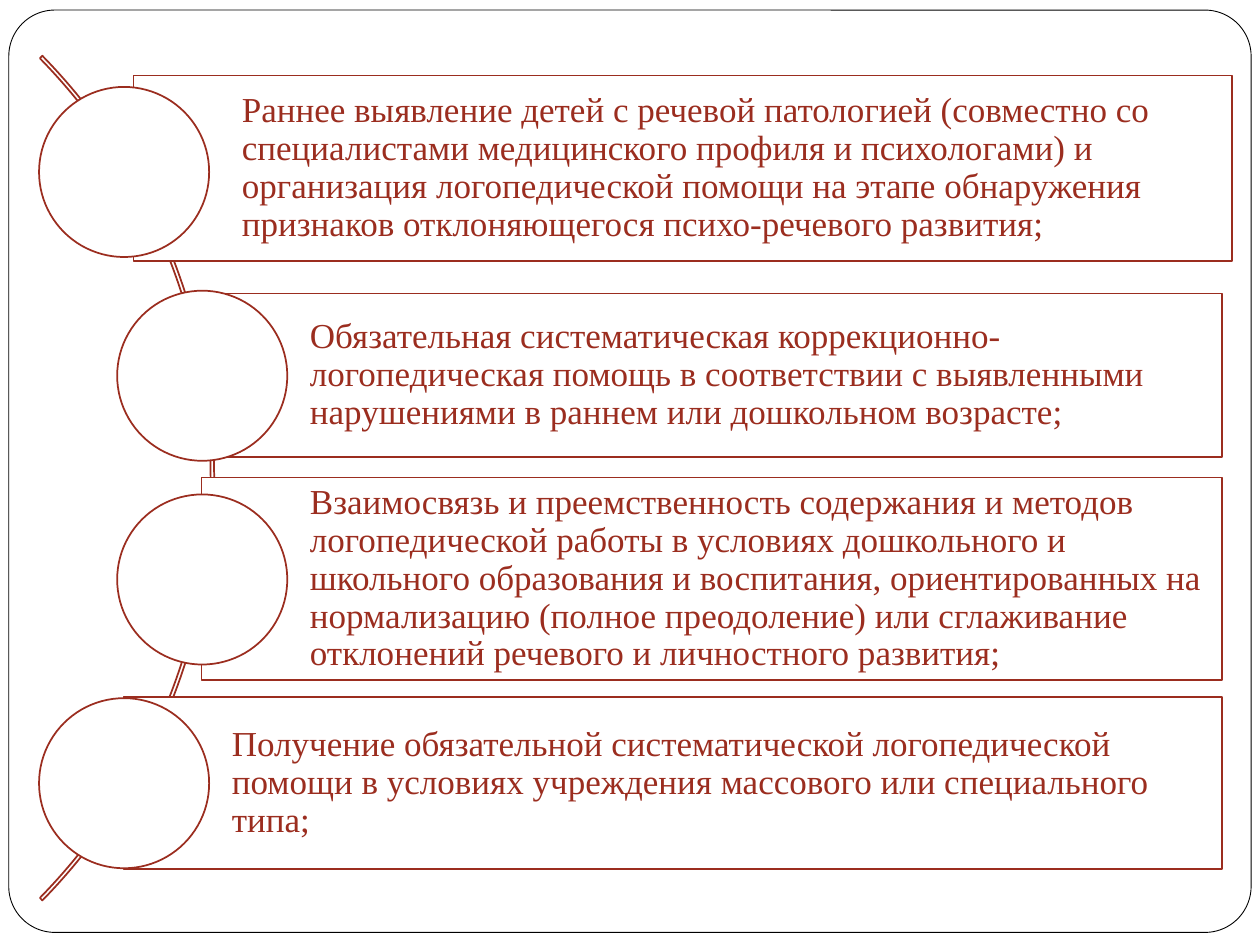
from pptx import Presentation, util as u
from pptx.dml.color import RGBColor
from pptx.enum import shapes, text

HUE = {"paper": "FFFFFF", "frame": "000000", "rust": "9B2D1F"}
FORM = shapes.MSO_SHAPE

deck = Presentation()
deck.slide_width, deck.slide_height = u.Inches(10), u.Inches(7.5)
slide = deck.slides.add_slide(deck.slide_layouts[6])
col, row = deck.slide_width / 100, deck.slide_height / 75


def draw(form, left, top, wide, high, hue="rust", line=1):
    item = slide.shapes.add_shape(
        form, int(left * col), int(top * row), int(wide * col), int(high * row))
    item.shadow.inherit = False
    item.fill.solid()
    item.fill.fore_color.rgb = RGBColor.from_string(HUE["paper"])
    item.line.color.rgb = RGBColor.from_string(HUE[hue])
    item.line.width = u.Pt(line)
    return item


frame = draw(FORM.ROUNDED_RECTANGLE, 0.7, 0.8, 98.6, 73.2, "frame", 0.5)
frame.adjustments[0] = 0.05

arc = draw(FORM.BLOCK_ARC, -77.3, -9.7, 94.3, 95.3)
for i, turn in enumerate((189, 27, 0.003)):
    arc.adjustments[i] = turn

goals = [
    (10.6, 6, 87.2, 14.7, 3.1,
     "Раннее выявление детей с речевой патологией (совместно со специалистами "
     "медицинского профиля и психологами) и организация логопедической помощи "
     "на этапе обнаружения признаков отклоняющегося психо-речевого развития;"),
    (16, 23.3, 81, 13, 9.3,
     "Обязательная систематическая коррекционно-логопедическая помощь в "
     "соответствии с выявленными нарушениями в раннем или дошкольном возрасте;"),
    (16, 37.9, 81, 16.1, 9.3,
     "Взаимосвязь и преемственность содержания и методов логопедической работы "
     "в условиях дошкольного и школьного образования и воспитания, "
     "ориентированных на нормализацию (полное преодоление) или сглаживание "
     "отклонений речевого и личностного развития;"),
    (9.8, 55.3, 87.2, 13.7, 3.1,
     "Получение обязательной систематической логопедической помощи в условиях "
     "учреждения массового или специального типа;"),
]
size, first, step = 13.5, 6.9, 16.17

for i, (left, top, wide, high, dot, words) in enumerate(goals):
    box = draw(FORM.RECTANGLE, left, top, wide, high).text_frame
    box.word_wrap = True
    box.vertical_anchor = text.MSO_ANCHOR.MIDDLE
    box.margin_left = int(8.6 * col)
    box.margin_right = box.margin_top = box.margin_bottom = int(0.6 * col)
    para = box.paragraphs[0]
    para.text = words
    para.alignment = text.PP_ALIGN.LEFT
    para.line_spacing = 0.9
    para.font.name = "Times New Roman"
    para.font.size = u.Pt(20)
    para.font.color.rgb = RGBColor.from_string(HUE["rust"])
    draw(FORM.OVAL, dot, first + i * step, size, size)

deck.save("out.pptx")
